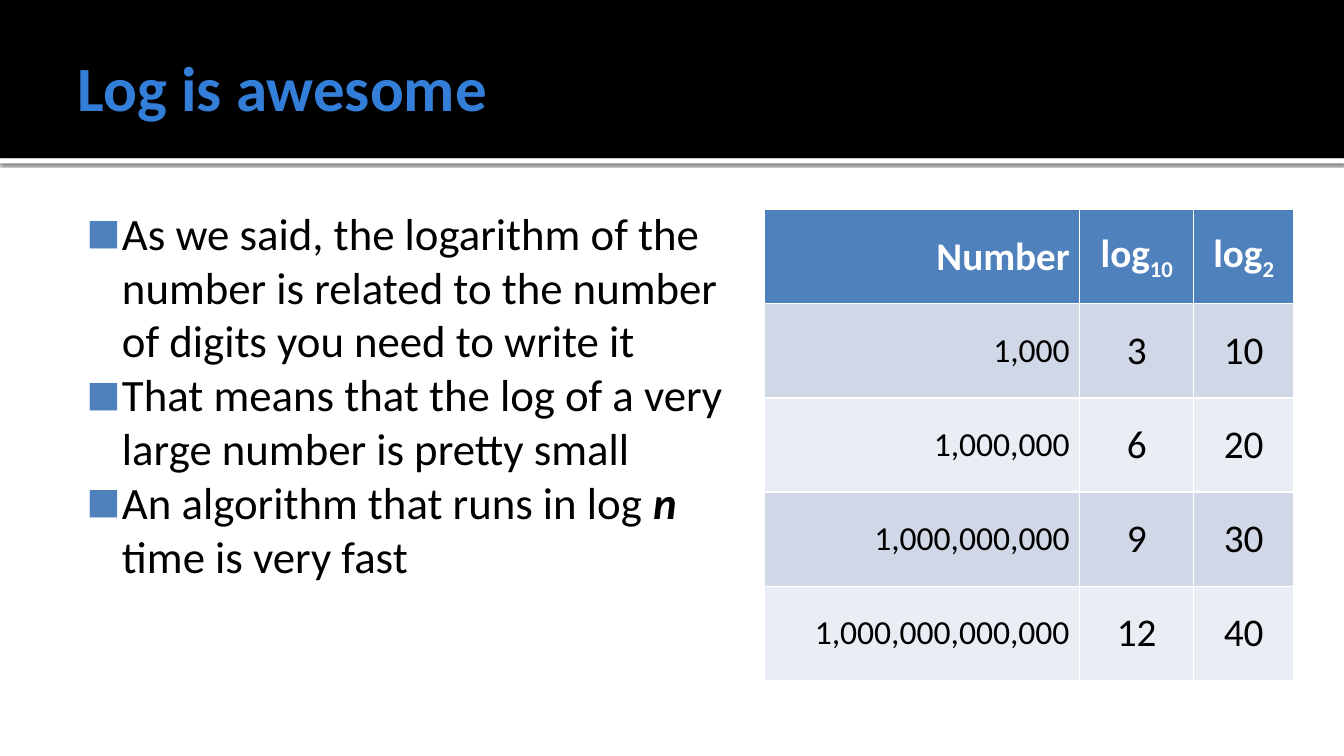
from lxml import etree
from pptx import Presentation
from pptx.dml.color import RGBColor
from pptx.enum.shapes import MSO_SHAPE
from pptx.enum.text import MSO_ANCHOR, MSO_AUTO_SIZE, PP_ALIGN
from pptx.oxml import parse_xml
from pptx.oxml.ns import nsdecls, qn
from pptx.util import Inches, Pt

BLUE, WHITE, BLACK = "4F81BD", "FFFFFF", "000000"
BANDS = ["E9EDF4", "D0D8E8"]


def rgb(value):
    return RGBColor.from_string(value)


def add_run(paragraph, text, size, color=BLACK, bold=False, italic=False, baseline=None):
    """Append formatted text; baseline is in thousandths of a percent."""
    run = paragraph.add_run()
    run.text = text
    font = run.font
    font.name, font.size, font.bold, font.italic = "Calibri", Pt(size), bold, italic
    font.color.rgb = rgb(color)
    if baseline:
        run._r.get_or_add_rPr().set("baseline", str(baseline))


presentation = Presentation()
presentation.slide_width = Inches(13.33)
presentation.slide_height = Inches(7.5)
slide = presentation.slides.add_slide(presentation.slide_layouts[1])
title, body = slide.placeholders

# Header band with a shadowed white strip below it, both behind the text
for position, (top, height, color) in enumerate([(1.57, 0.05, WHITE), (0, 1.57, BLACK)]):
    band = slide.shapes.add_shape(
        MSO_SHAPE.RECTANGLE, 0, Inches(top), presentation.slide_width, Inches(height))
    band.shadow.inherit = False
    band.fill.solid()
    band.fill.fore_color.rgb = rgb(color)
    band.line.fill.background()
    slide.shapes._spTree.insert(2 + position, band._element)
    if color == WHITE:
        effects = band._element.spPr.find(qn("a:effectLst"))
        effects.append(parse_xml(
            f'<a:outerShdw {nsdecls("a")} blurRad="{Pt(2.5)}" dist="{Pt(0.8)}" dir="5400000" '
            'algn="tl" rotWithShape="0"><a:srgbClr val="000000"><a:alpha val="60000"/>'
            '</a:srgbClr></a:outerShdw>'))

# Title and body placeholders
for placeholder, box, margins, anchor in [
    (title, (0.67, 0.17, 12, 1.37), (0.1, 0.05, 0.05, 0.05), MSO_ANCHOR.MIDDLE),
    (body, (0.67, 1.94, 6.92, 5.06), (0.06, 0.1, 0.1, 0.05), MSO_ANCHOR.TOP),
]:
    placeholder.left, placeholder.top, placeholder.width, placeholder.height = map(Inches, box)
    frame = placeholder.text_frame
    frame.margin_left, frame.margin_top, frame.margin_right, frame.margin_bottom = map(
        Inches, margins)
    frame.vertical_anchor = anchor
    frame.word_wrap = True
    frame.auto_size = MSO_AUTO_SIZE.NONE

heading = title.text_frame.paragraphs[0]
heading.alignment = PP_ALIGN.LEFT
add_run(heading, "Log is awesome", 45, "337ED9", bold=True)

# Each bullet is a list of (text, emphasised) parts
bullets = [
    [("As we said, the logarithm of the number is related to the number of digits "
      "you need to write it", False)],
    [("That means that the log of a very large number is pretty small", False)],
    [("An algorithm that runs in log ", False), ("n", True), (" time is very fast", False)],
]
for index, parts in enumerate(bullets):
    frame = body.text_frame
    paragraph = frame.add_paragraph() if index else frame.paragraphs[0]
    paragraph.space_before = Pt(0)
    properties = paragraph._p.get_or_add_pPr()
    properties.set("marL", str(Inches(0.48)))
    properties.set("indent", str(Inches(-0.35)))
    bullet_color = etree.SubElement(properties, qn("a:buClr"))
    etree.SubElement(bullet_color, qn("a:srgbClr"), val=BLUE)
    etree.SubElement(properties, qn("a:buSzPct"), val="80000")
    etree.SubElement(properties, qn("a:buFont"), typeface="Calibri")
    etree.SubElement(properties, qn("a:buChar"), char="■")
    for text, emphasised in parts:
        add_run(paragraph, text, 32, bold=emphasised, italic=emphasised)

# Logarithm table; a header is a word and its subscript
headers = [("Number", ""), ("log", "10"), ("log", "2")]
rows = [
    ("1,000", "3", "10"),
    ("1,000,000", "6", "20"),
    ("1,000,000,000", "9", "30"),
    ("1,000,000,000,000", "12", "40"),
]
table = slide.shapes.add_table(
    len(rows) + 1, len(headers), Inches(7.58), Inches(2.08), Inches(5.25), Inches(4.67)).table
for column, width in zip(table.columns, (3.13, 1.13, 0.99)):
    column.width = Inches(width)

for row_index, row in enumerate([headers, *rows]):
    for column_index, content in enumerate(row):
        cell = table.cell(row_index, column_index)
        cell.vertical_anchor = MSO_ANCHOR.MIDDLE
        cell.fill.solid()
        cell.fill.fore_color.rgb = rgb(BANDS[row_index % 2] if row_index else BLUE)
        paragraph = cell.text_frame.paragraphs[0]
        paragraph.alignment = PP_ALIGN.CENTER if column_index else PP_ALIGN.RIGHT
        if row_index:
            add_run(paragraph, content, 28 if column_index else 24)
        else:
            word, subscript = content
            add_run(paragraph, word, 28, WHITE, bold=True)
            if subscript:
                add_run(paragraph, subscript, 28, WHITE, bold=True, baseline=-25000)

presentation.save("out.pptx")
